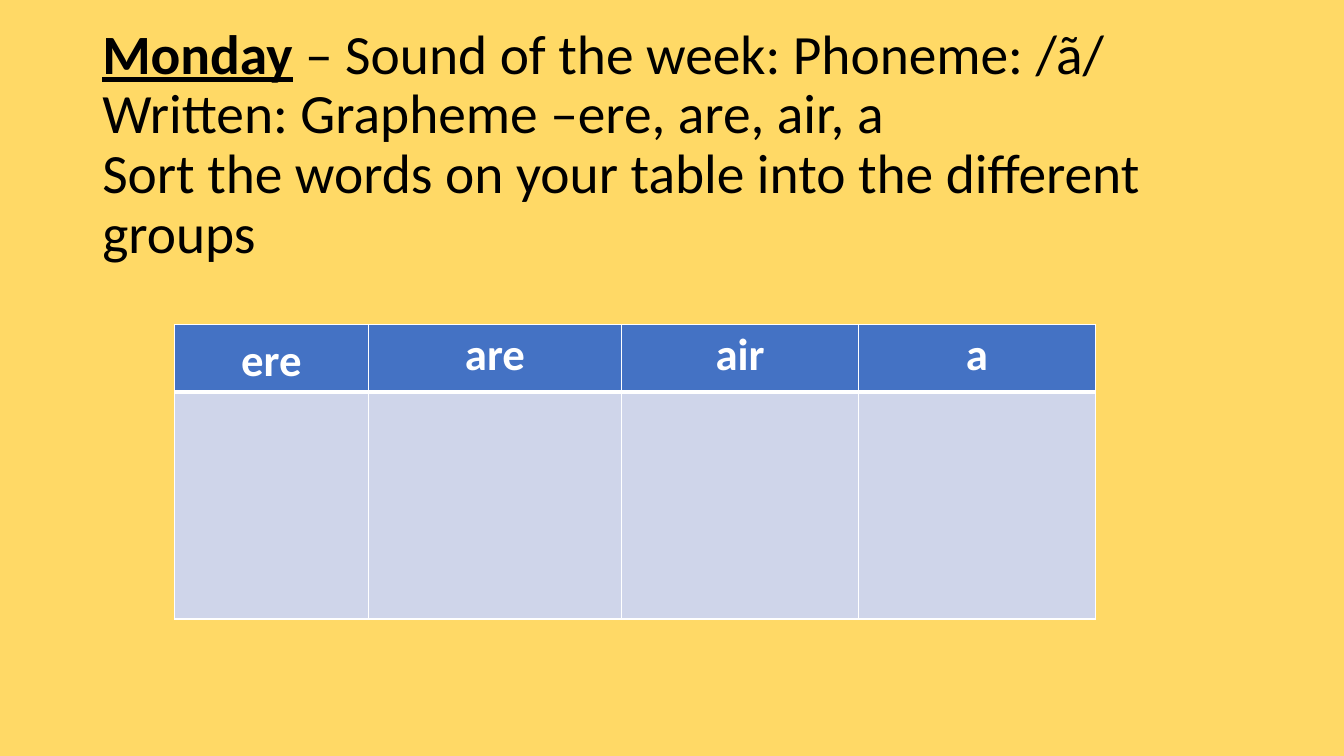
"""Build the Monday phonics slide with a table for sorting words by grapheme."""
from lxml import etree
from pptx import Presentation
from pptx import util as u
from pptx.dml import color
from pptx.enum import text
from pptx.oxml import ns

FONT = "Calibri"
DAY = "Monday"
TASK = (" – Sound of the week: Phoneme: /ã/ Written: Grapheme –ere, are, air, a\v"
        "Sort the words on your table into the different groups")
GRAPHEMES = ["ere", "are", "air", "a"]
COLUMN_WIDTHS = [138.5, 181, 169.2, 169.2]
ROW_HEIGHTS = [36.7, 162]
ROW_FILLS = ["4472C4", "CFD5EA"]
TITLE_BOX = (66, 52, 828, 104.4)
TABLE_ORIGIN = (124.6, 231.8)


def rgb(value):
    return color.RGBColor.from_string(value)


def add_text(paragraph, content, size, colour, bold=False, underline=False):
    run = paragraph.add_run()
    run.text = content.replace("\v", "")
    font = run.font
    font.name, font.size, font.bold = FONT, u.Pt(size), bold
    font.underline = underline
    font.color.rgb = rgb(colour)


def set_borders(cell, widths):
    properties = cell._tc.get_or_add_tcPr()
    for position, (side, width) in enumerate(widths.items()):
        line = etree.Element(ns.qn(f"a:ln{side}"), w=str(u.Pt(width)))
        fill = etree.SubElement(line, ns.qn("a:solidFill"))
        etree.SubElement(fill, ns.qn("a:srgbClr"), val="FFFFFF")
        properties.insert(position, line)


def add_title(slide):
    frame = slide.shapes.add_textbox(*map(u.Pt, TITLE_BOX)).text_frame
    frame.word_wrap = True
    frame.vertical_anchor = text.MSO_ANCHOR.MIDDLE
    paragraph = frame.paragraphs[0]
    paragraph.line_spacing = 0.9
    add_text(paragraph, DAY, 39.6, "000000", bold=True, underline=True)
    for index, line in enumerate(TASK.split("\v")):
        if index:
            paragraph.add_line_break()
        add_text(paragraph, line, 39.6, "000000")


def add_sorting_table(slide):
    size = sum(COLUMN_WIDTHS), sum(ROW_HEIGHTS)
    table = slide.shapes.add_table(
        len(ROW_HEIGHTS), len(GRAPHEMES), *map(u.Pt, TABLE_ORIGIN + size)).table
    for column, width in zip(table.columns, COLUMN_WIDTHS):
        column.width = u.Pt(width)
    for index, (row, height) in enumerate(zip(table.rows, ROW_HEIGHTS)):
        row.height = u.Pt(height)
        for cell in row.cells:
            cell.fill.solid()
            cell.fill.fore_color.rgb = rgb(ROW_FILLS[index])
            set_borders(cell, {"L": 1, "R": 1, "T": 3 if index else 1,
                               "B": 1 if index else 3})
    for index, grapheme in enumerate(GRAPHEMES):
        cell = table.cell(0, index)
        if index:
            cell.margin_left = cell.margin_right = 0
            cell.margin_top = cell.margin_bottom = 0
        paragraph = cell.text_frame.paragraphs[0]
        paragraph.alignment = text.PP_ALIGN.CENTER
        paragraph.line_spacing = 1.07
        paragraph.space_after = u.Pt(8)
        add_text(paragraph, grapheme, 32, "FFFFFF", bold=True)


def main():
    presentation = Presentation()
    presentation.slide_width, presentation.slide_height = u.Pt(960), u.Pt(540)
    slide = presentation.slides.add_slide(presentation.slide_layouts[6])
    slide.background.fill.solid()
    slide.background.fill.fore_color.rgb = rgb("FFD966")
    add_title(slide)
    add_sorting_table(slide)
    presentation.save("out.pptx")


if __name__ == "__main__":
    main()
